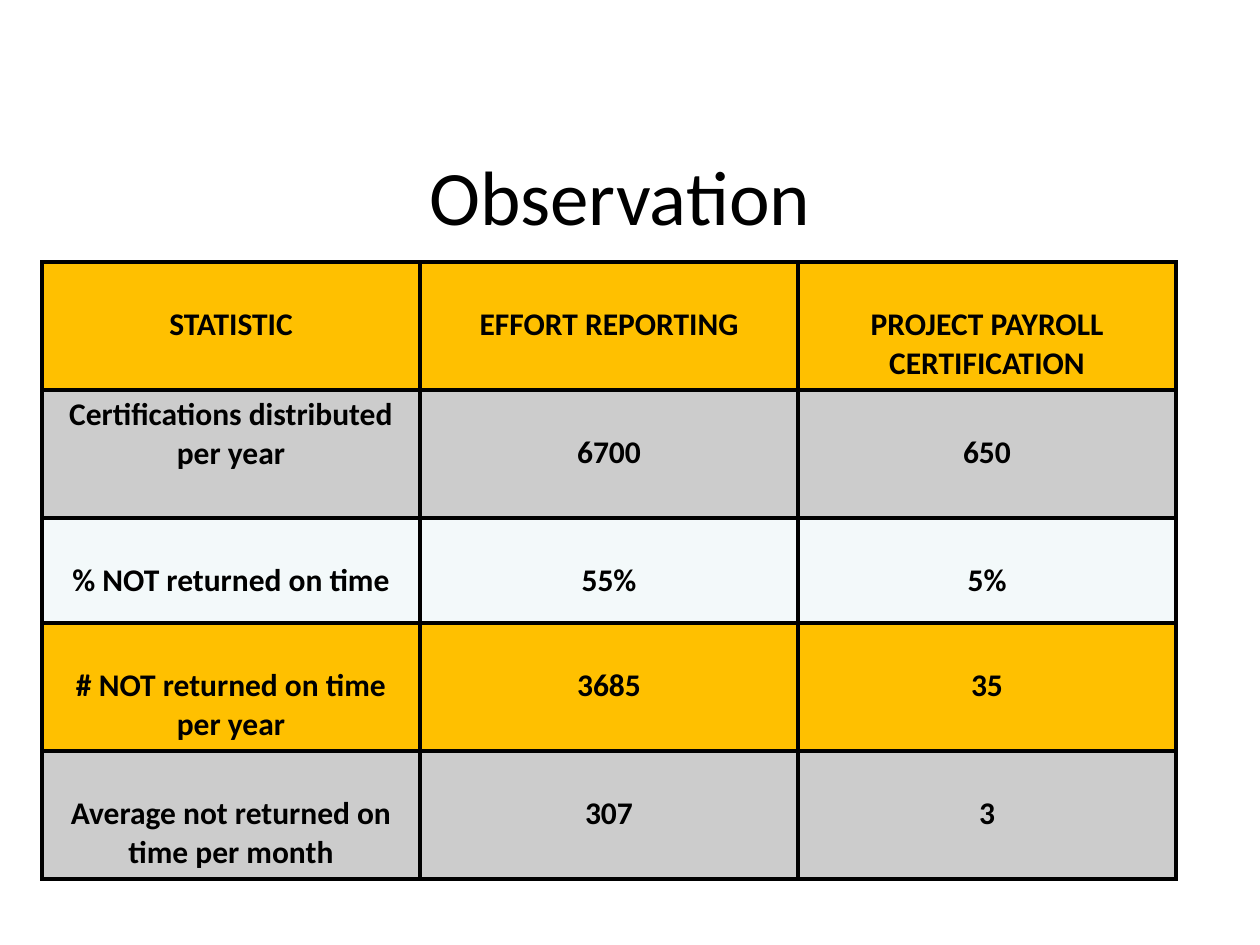
from lxml.etree import SubElement
from pptx import Presentation
from pptx.dml.color import RGBColor
from pptx.enum.text import MSO_ANCHOR, PP_ALIGN
from pptx.oxml.ns import qn
from pptx.util import Pt

GOLD, GRAY, PALE = "FFC000", "CCCCCC", "F3F9FA"
ROWS = [
    (128, GOLD, ["STATISTIC", "EFFORT REPORTING", "PROJECT PAYROLL CERTIFICATION"]),
    (128, GRAY, ["Certifications distributed per year", "6700", "650"]),
    (105, PALE, ["% NOT returned on time", "55%", "5%"]),
    (128, GOLD, ["# NOT returned on time per year", "3685", "35"]),
    (128, GRAY, ["Average not returned on time per month", "307", "3"]),
]
HIGH = {(1, 0)}  # cells whose text starts at the top edge


def px(n):
    """Turn pixels, 126 to the inch, into EMU."""
    return round(n * 914400 / 126)


def rgb(code):
    return RGBColor.from_string(code)


class Deck:
    font, ink = "Calibri", "000000"
    pad, drop = 6, 44  # top margins of high and lowered cell text

    def __init__(self, wide, tall):
        self.prs = Presentation()
        self.prs.slide_width, self.prs.slide_height = px(wide), px(tall)
        self.slide = self.prs.slides.add_slide(self.prs.slide_layouts[5])

    def label(self, frame, text, size, bold=False):
        frame.text = text
        para = frame.paragraphs[0]
        para.alignment = PP_ALIGN.CENTER
        font = para.font
        font.name, font.size, font.bold = self.font, Pt(size), bold
        font.color.rgb = rgb(self.ink)

    def title(self, text, x, y, w, h):
        box = self.slide.shapes.title
        box.left, box.top, box.width, box.height = map(px, (x, y, w, h))
        box.text_frame.vertical_anchor = MSO_ANCHOR.MIDDLE
        self.label(box.text_frame, text, 44)

    def edge(self, cell):
        """Draw a solid border on all four sides of the cell."""
        props = cell._tc.get_or_add_tcPr()
        for side in ("lnL", "lnR", "lnT", "lnB"):
            line = SubElement(props, qn(f"a:{side}"), w=str(Pt(2.25)))
            fill = SubElement(line, qn("a:solidFill"))
            SubElement(fill, qn("a:srgbClr"), val=self.ink)

    def table(self, rows, x, y, col):
        count = len(rows[0][2])
        tall = sum(row[0] for row in rows)
        grid = self.slide.shapes.add_table(
            len(rows), count, px(x), px(y), px(col * count), px(tall)).table
        for r, (high, fill, texts) in enumerate(rows):
            grid.rows[r].height = px(high)
            for c, text in enumerate(texts):
                cell = grid.cell(r, c)
                self.edge(cell)
                cell.fill.solid()
                cell.fill.fore_color.rgb = rgb(fill)
                cell.margin_top = px(self.pad if (r, c) in HIGH else self.drop)
                self.label(cell.text_frame, text, 18, True)


def main():
    deck = Deck(1260, 945)
    deck.title("Observation", 53, 116, 1134, 158)
    deck.table(ROWS, 42, 262, 378)
    deck.prs.save("out.pptx")


if __name__ == "__main__":
    main()
